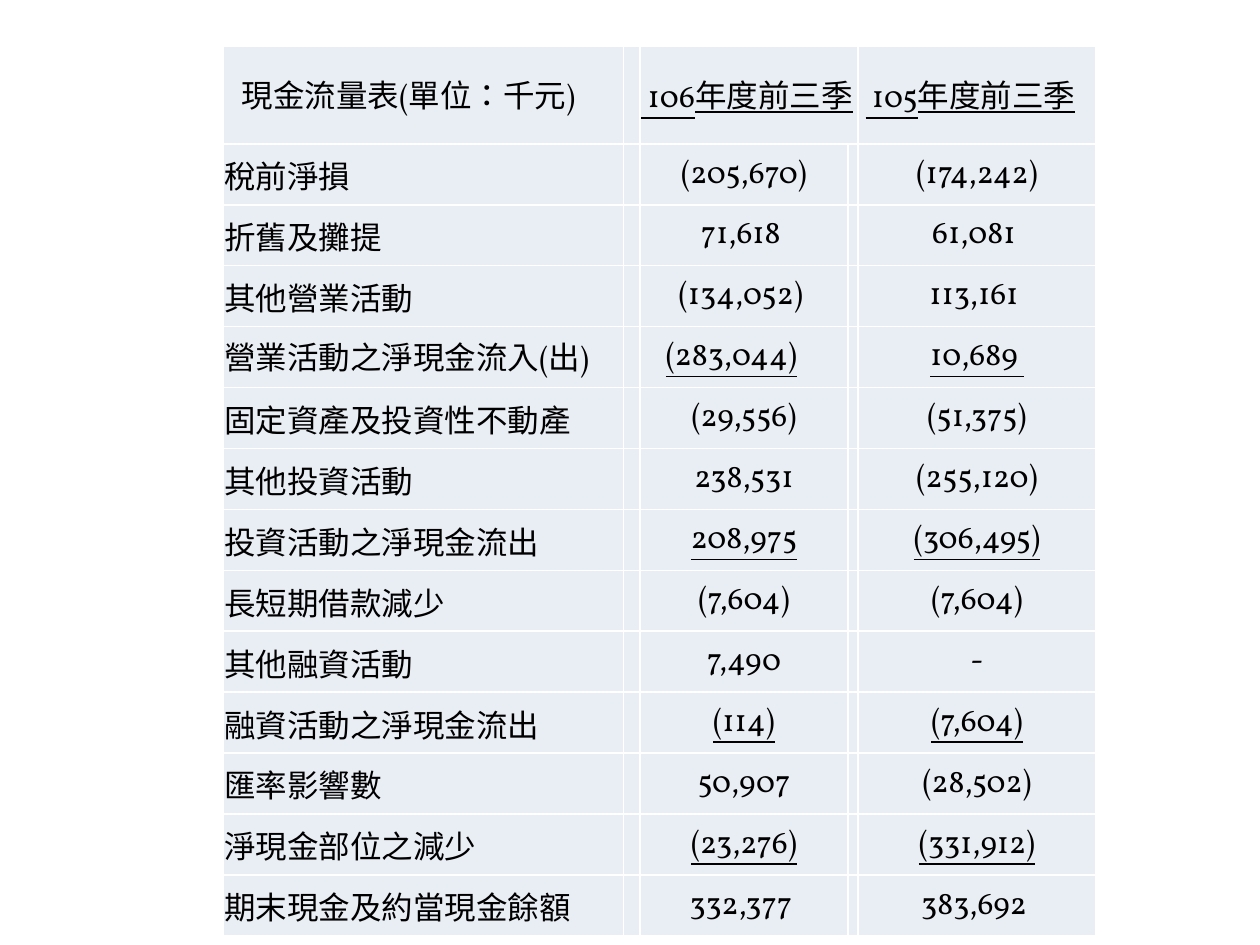
"""Build a slide with a two-period cash flow statement table."""
from pptx import Presentation
from pptx.dml.color import RGBColor
from pptx.enum import lang, text
from pptx.oxml import parse_xml
from pptx.oxml.ns import nsdecls
from pptx.util import Inches, Pt

BLACK = RGBColor(0x00, 0x00, 0x00)
PALE = RGBColor(0xE9, 0xED, 0xF4)
WHITE = RGBColor(0xFF, 0xFF, 0xFF)
FONT = "Vollkorn"

COL_WIDTHS = [3.18, 0.13, 1.65, 0.08, 1.89]
TABLE_HEIGHT = 6.77
INSET = 0.01
LABEL_COL, THIS_YEAR_COL, LAST_YEAR_COL = 0, 2, 4
SUBTOTAL_ROWS = {4, 7, 10, 12}
LEFT_INSETS = {(0, LABEL_COL): 0.15, (0, LAST_YEAR_COL): 0.06}
RIGHT_INSETS = {(4, THIS_YEAR_COL): 0.21}
ROWS = [
    ("現金流量表(單位：千元)", " 106年度前三季", " 105年度前三季"),
    ("稅前淨損", "(205,670)", "(174,242)"),
    ("折舊及攤提", "71,618 ", "61,081 "),
    ("其他營業活動", "(134,052) ", "113,161 "),
    ("營業活動之淨現金流入(出)", "(283,044)", "10,689 "),
    ("固定資產及投資性不動產", "(29,556)", "(51,375)"),
    ("其他投資活動", "238,531", "(255,120)"),
    ("投資活動之淨現金流出", "208,975", "(306,495)"),
    ("長短期借款減少", "(7,604)", "(7,604)"),
    ("其他融資活動", "7,490", "-"),
    ("融資活動之淨現金流出", "(114)", "(7,604)"),
    ("匯率影響數", "50,907", "(28,502)"),
    ("淨現金部位之減少", "(23,276)", "(331,912)"),
    ("期末現金及約當現金餘額", "332,377 ", "383,692 "),
]


def style_cell(cell, left, right):
    tcPr = cell._tc.get_or_add_tcPr()
    for side in ("lnL", "lnR", "lnT", "lnB"):
        tcPr.append(parse_xml(
            f'<a:{side} {nsdecls("a")} w="{Pt(1)}"><a:solidFill>'
            f'<a:srgbClr val="{WHITE}"/></a:solidFill></a:{side}>'))
    cell.fill.solid()
    cell.fill.fore_color.rgb = PALE
    cell.vertical_anchor = text.MSO_ANCHOR.MIDDLE
    cell.margin_left = Inches(left)
    cell.margin_right = Inches(right)
    cell.margin_top = Inches(INSET)
    cell.margin_bottom = 0


def write_cell(cell, value, centred, underlined):
    p = cell.text_frame.paragraphs[0]
    p.alignment = text.PP_ALIGN.CENTER if centred else text.PP_ALIGN.LEFT
    r = p.add_run()
    r.text = value
    r.font.name = FONT
    r.font.size = Pt(18)
    r.font.color.rgb = BLACK
    r.font.underline = underlined
    r.font.language_id = lang.MSO_LANGUAGE_ID.TRADITIONAL_CHINESE


prs = Presentation()
prs.slide_width, prs.slide_height = Inches(10), Inches(7.5)
s = prs.slides.add_slide(prs.slide_layouts[6])

table = s.shapes.add_table(
    len(ROWS), len(COL_WIDTHS), Inches(1.77), Inches(0.37),
    Inches(sum(COL_WIDTHS)), Inches(TABLE_HEIGHT)).table
table.first_row = False
table.horz_banding = False
for column, width in zip(table.columns, COL_WIDTHS):
    column.width = Inches(width)
for i, row in enumerate(table.rows):
    row.height = Inches(TABLE_HEIGHT / len(ROWS))
    for col, cell in enumerate(row.cells):
        style_cell(cell, LEFT_INSETS.get((i, col), INSET),
                   RIGHT_INSETS.get((i, col), INSET))
table.cell(0, THIS_YEAR_COL).merge(table.cell(0, THIS_YEAR_COL + 1))

for i, values in enumerate(ROWS):
    for col, value in zip((LABEL_COL, THIS_YEAR_COL, LAST_YEAR_COL), values):
        is_period = col != LABEL_COL
        write_cell(
            table.cell(i, col), value,
            centred=is_period and i > 0,
            underlined=is_period and (i == 0 or i in SUBTOTAL_ROWS))

prs.save("out.pptx")
